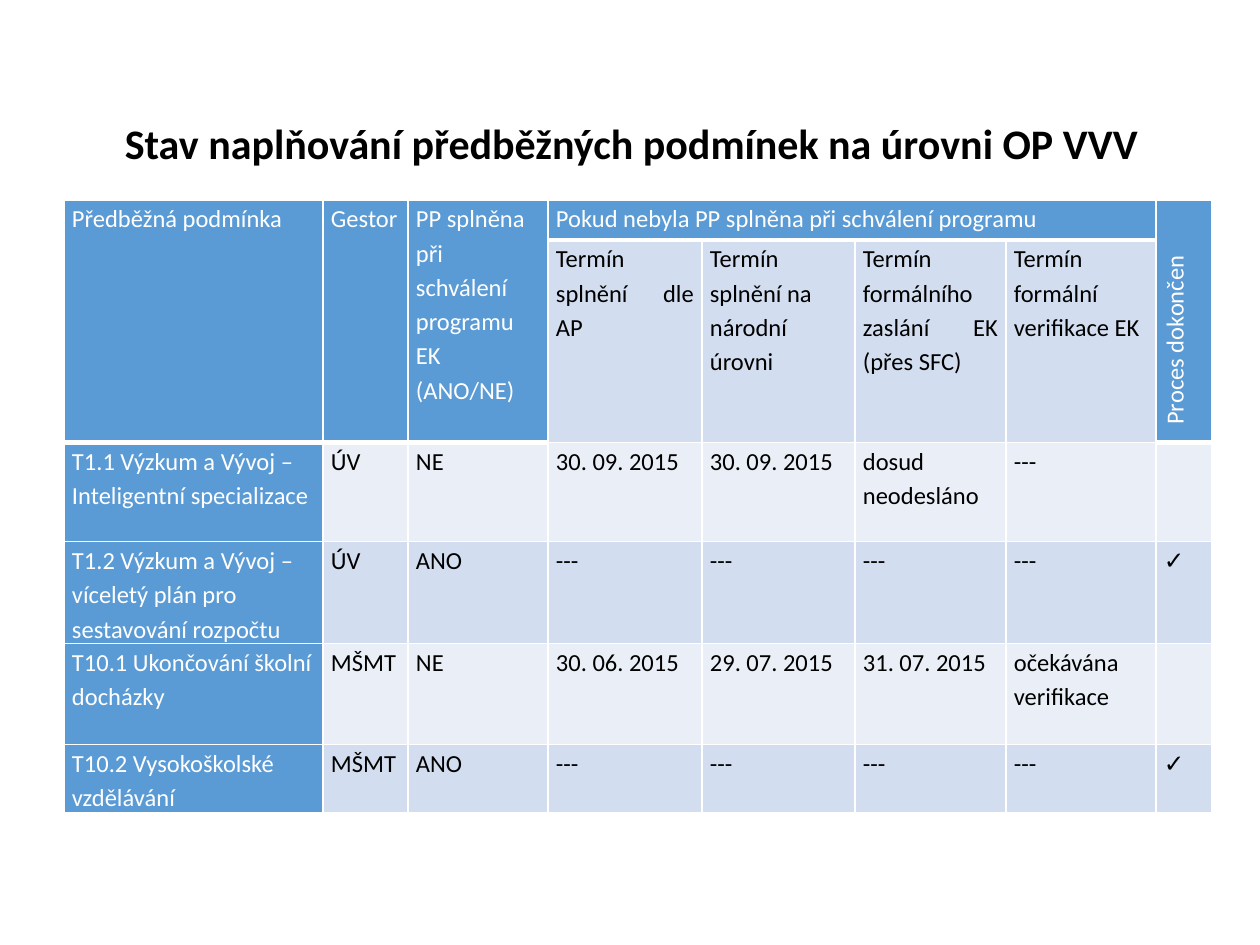
from dataclasses import dataclass

from lxml import etree
from pptx import Presentation, util as u
from pptx.dml.color import RGBColor
from pptx.enum import text
from pptx.oxml import ns

PX = u.Inches(1) / 126
LEFT, JUSTIFY = text.PP_ALIGN.LEFT, text.PP_ALIGN.JUSTIFY


@dataclass(frozen=True)
class Theme:
    font: str = "Calibri"
    title_size: int = 24
    body_size: int = 14
    dark: str = "000000"
    light: str = "FFFFFF"
    header: str = "5B9BD5"
    band: str = "D2DEEF"
    pale_band: str = "EAEFF7"


THEME = Theme()
COLUMNS = [259, 85, 140, 154, 153, 151, 150, 56]
ROWS = [40, 202, 99, 102, 101, 68]
CONTENT = [
    ["Předběžná podmínka", "Gestor", "PP splněna při schválení programu EK (ANO/NE)",
     "Pokud nebyla PP splněna při schválení programu", "", "", "", "Proces dokončen"],
    ["", "", "", "Termín splnění dle AP", "Termín splnění na národní úrovni",
     "Termín formálního zaslání EK (přes SFC)", "Termín formální verifikace EK", ""],
    ["T1.1 Výzkum a Vývoj – Inteligentní specializace", "ÚV", "NE",
     "30. 09. 2015", "30. 09. 2015", "dosud neodesláno", "---", ""],
    ["T1.2 Výzkum a Vývoj – víceletý plán pro sestavování rozpočtu", "ÚV", "ANO",
     "---", "---", "---", "---", "✓"],
    ["T10.1 Ukončování školní docházky", "MŠMT", "NE",
     "30. 06. 2015", "29. 07. 2015", "31. 07. 2015", "očekávána\nverifikace", ""],
    ["T10.2 Vysokoškolské vzdělávání", "MŠMT", "ANO",
     "---", "---", "---", "---", "✓"],
]
MERGES = [((0, column), (1, column)) for column in (0, 1, 2, 7)] + [((0, 3), (0, 6))]
LEFT_ALIGNED = {(0, 1), (0, 2), (1, 4), (4, 3), (4, 4), (4, 6)}


def px(length):
    return u.Emu(round(length * PX))


def write(frame, content, *, size=THEME.body_size, color=THEME.dark, bold=False,
          align=LEFT, spacing=None):
    for index, line in enumerate(content.split("\n")):
        paragraph = frame.add_paragraph() if index else frame.paragraphs[0]
        paragraph.alignment = align
        paragraph.line_spacing = spacing
        run = paragraph.add_run()
        run.text = line
        run.font.name = THEME.font
        run.font.size = u.Pt(size)
        run.font.bold = bold
        run.font.color.rgb = RGBColor.from_string(color)


def add_title(slide, content):
    frame = slide.shapes.add_textbox(px(71), px(111), px(1121), px(301)).text_frame
    frame.word_wrap = True
    write(frame, content, size=THEME.title_size, bold=True, align=text.PP_ALIGN.CENTER)


def set_borders(cell, bottom=1):
    """Must run before the fill is set, since lines come first in the cell properties."""
    properties = cell._tc.get_or_add_tcPr()
    for side, width in (("L", 1), ("R", 1), ("T", 1), ("B", bottom)):
        line = etree.SubElement(properties, ns.qn(f"a:ln{side}"), w=str(u.Pt(width)))
        fill = etree.SubElement(line, ns.qn("a:solidFill"))
        etree.SubElement(fill, ns.qn("a:srgbClr"), val=THEME.light)


def turn_upward(cell):
    cell._tc.get_or_add_tcPr().set("vert", "vert270")
    cell.vertical_anchor = text.MSO_ANCHOR.MIDDLE
    cell.text_frame.paragraphs[0]._p.get_or_add_pPr().set("marL", str(px(10)))


def format_cell(cell, row, column, content):
    is_header = row == 0 or column == 0 or (row == 1 and column in (1, 2, 7))
    band = THEME.band if row % 2 else THEME.pale_band
    set_borders(cell, bottom=3 if row == 0 else 1)
    cell.fill.solid()
    cell.fill.fore_color.rgb = RGBColor.from_string(THEME.header if is_header else band)
    cell.margin_left = cell.margin_right = px(8)
    cell.margin_top = cell.margin_bottom = 0
    if content:
        is_left = (row, column) in LEFT_ALIGNED or (row > 1 and column == 0) or column == 7
        write(cell.text_frame, content, color=THEME.light if is_header else THEME.dark,
              align=LEFT if is_left else JUSTIFY, spacing=1.15)


def add_conditions_table(slide):
    table = slide.shapes.add_table(len(ROWS), len(COLUMNS), px(64), px(200),
                                   px(sum(COLUMNS)), px(sum(ROWS))).table
    table.first_row = table.horz_banding = False
    for column, width in zip(table.columns, COLUMNS):
        column.width = px(width)
    for row, height in zip(table.rows, ROWS):
        row.height = px(height)
    for row, values in enumerate(CONTENT):
        for column, content in enumerate(values):
            format_cell(table.cell(row, column), row, column, content)
    for start, end in MERGES:
        table.cell(*start).merge(table.cell(*end))
    turn_upward(table.cell(0, 7))


def main():
    presentation = Presentation()
    presentation.slide_width, presentation.slide_height = px(1260), px(945)
    slide = presentation.slides.add_slide(presentation.slide_layouts[6])
    add_title(slide, "Stav naplňování předběžných podmínek na úrovni OP VVV")
    add_conditions_table(slide)
    presentation.save("out.pptx")


if __name__ == "__main__":
    main()
